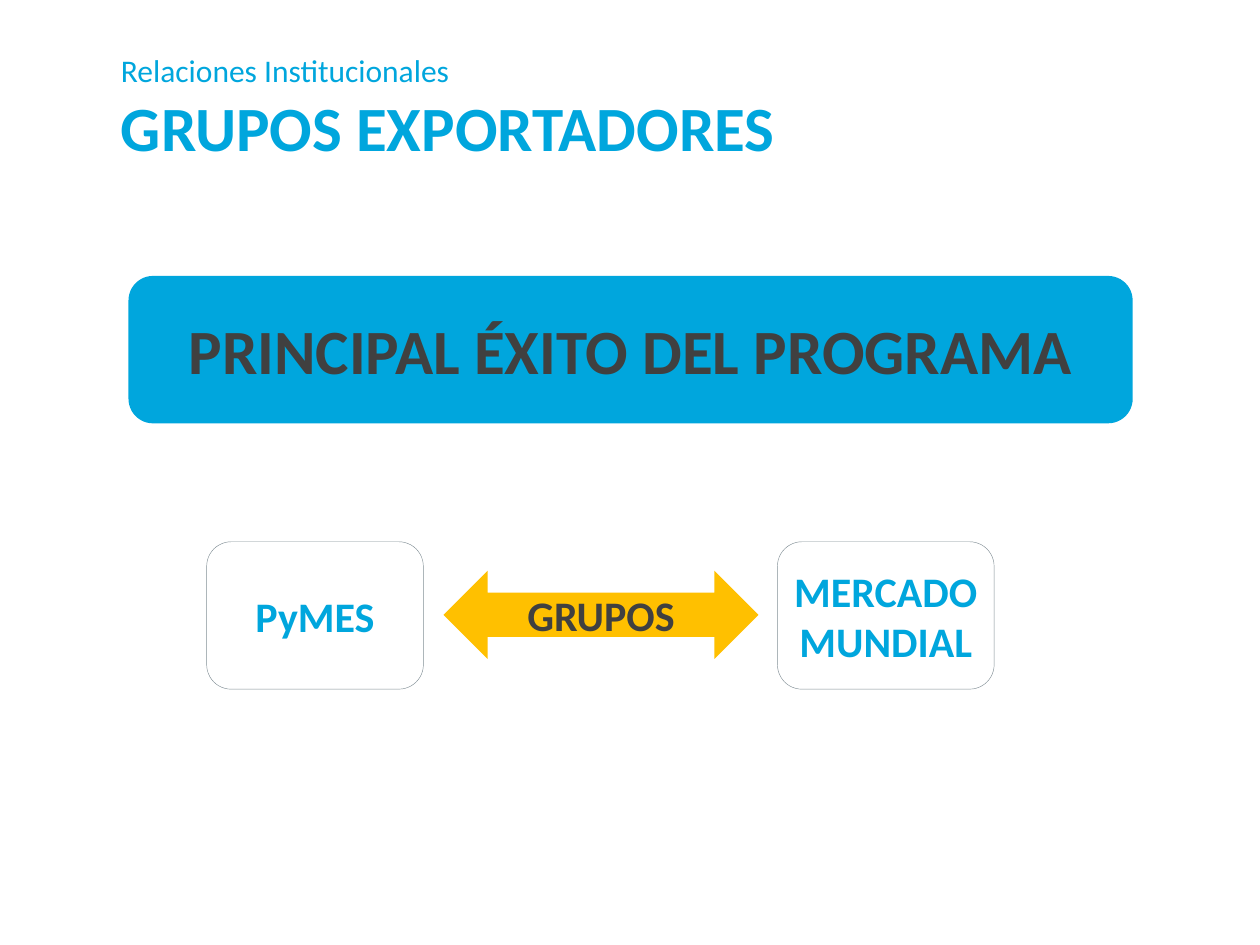
from lxml import etree
from pptx import Presentation
from pptx.dml.color import RGBColor
from pptx.enum import shapes, text
from pptx.oxml.ns import qn
from pptx.util import Inches, Pt

FONT = "Calibri"
COLORS = {"blue": "00A6DD", "dark": "404040", "gray": "828F96", "yellow": "FFC000"}


def rgb(name):
    return RGBColor.from_string(COLORS[name])


def format_run(r, size, color, bold):
    r.font.name = FONT
    r.font.size = Pt(size)
    r.font.bold = bold
    r.font.color.rgb = rgb(color)


def set_title(s, section, heading):
    """Fill the title with a small section name above a bold heading."""
    sp = s.shapes.title
    sp.left, sp.top = Inches(0.86), Inches(0.23)
    sp.width, sp.height = Inches(5.94), Inches(1.25)
    tf = sp.text_frame
    tf.vertical_anchor = text.MSO_ANCHOR.MIDDLE
    tf.text = f"{section}\v{heading}"
    p = tf.paragraphs[0]
    p.alignment = text.PP_ALIGN.LEFT
    format_run(p.runs[0], 18, "blue", False)
    format_run(p.runs[1], 36, "blue", True)
    # The line break needs the small size too, or it makes the first line taller
    etree.SubElement(p._p.find(qn("a:br")), qn("a:rPr"), sz="1800")


def add_label(s, kind, box, label, size, color, fill=None, line=None):
    sp = s.shapes.add_shape(kind, *map(Inches, box))
    sp.shadow.inherit = False
    if fill:
        sp.fill.solid()
        sp.fill.fore_color.rgb = rgb(fill)
    else:
        sp.fill.background()
    if line:
        sp.line.color.rgb = rgb(line)
        sp.line.width = Pt(0.25)
    else:
        sp.line.fill.background()
    tf = sp.text_frame
    tf.word_wrap = True
    tf.vertical_anchor = text.MSO_ANCHOR.MIDDLE
    if kind == shapes.MSO_SHAPE.ROUNDED_RECTANGLE:
        tf.margin_left = tf.margin_right = Inches(0.06)
    tf.text = label
    p = tf.paragraphs[0]
    p.alignment = text.PP_ALIGN.CENTER
    format_run(p.runs[0], size, color, True)


def main():
    prs = Presentation()
    prs.slide_width, prs.slide_height = Inches(10), Inches(7.5)
    s = prs.slides.add_slide(prs.slide_layouts[5])
    rounded = shapes.MSO_SHAPE.ROUNDED_RECTANGLE

    set_title(s, "Relaciones Institucionales", "GRUPOS EXPORTADORES")
    add_label(s, rounded, (1.02, 2.19, 7.97, 1.17),
              "PRINCIPAL ÉXITO DEL PROGRAMA", 36, "dark", fill="blue")
    for left, label in ((1.64, "PyMES"), (6.17, "MERCADO MUNDIAL")):
        add_label(s, rounded, (left, 4.3, 1.72, 1.17), label, 24, "blue", line="gray")
    add_label(s, shapes.MSO_SHAPE.LEFT_RIGHT_ARROW, (3.52, 4.53, 2.5, 0.7),
              "GRUPOS", 24, "dark", fill="yellow")
    prs.save("out.pptx")


if __name__ == "__main__":
    main()
